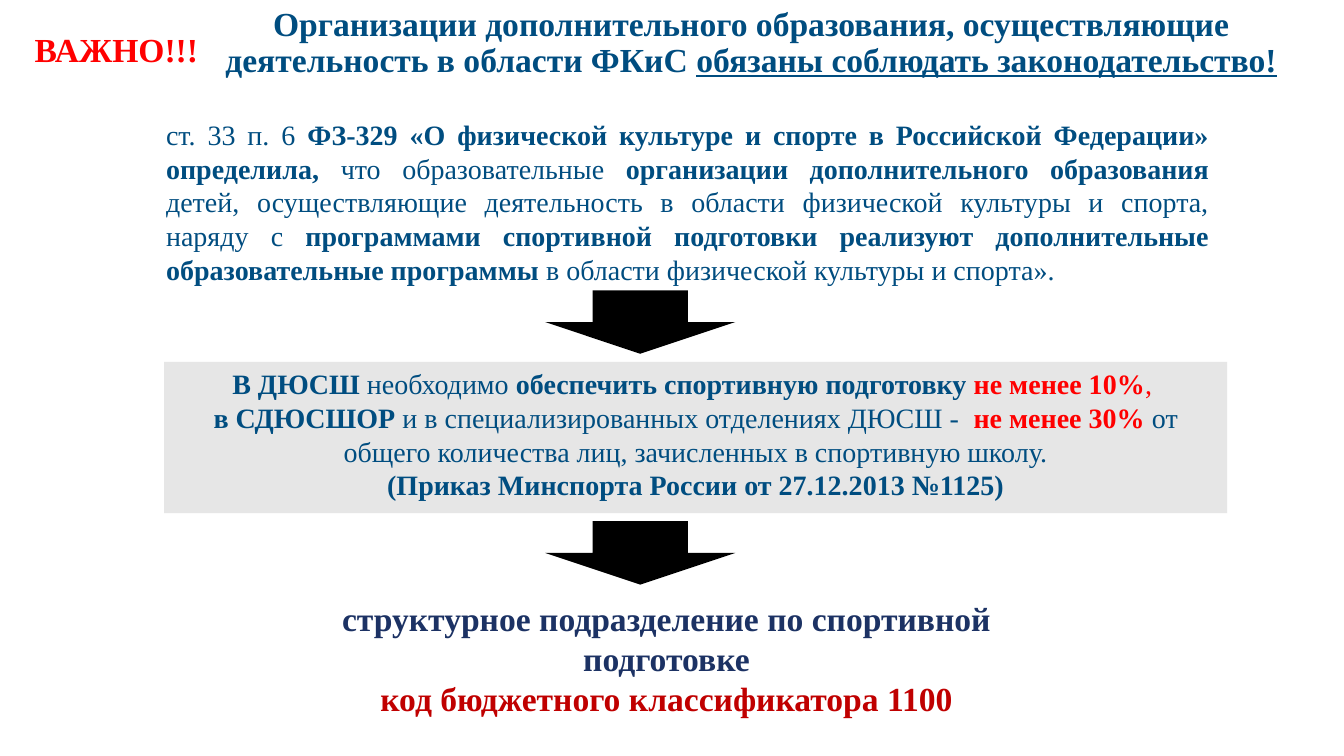
import pptx
import pptx.util
import pptx.dml.color
import pptx.enum.shapes
import pptx.enum.text
import pptx.oxml
import pptx.oxml.ns

Inches = pptx.util.Inches
RGBColor = pptx.dml.color.RGBColor
SHAPE = pptx.enum.shapes.MSO_SHAPE
ALIGN = pptx.enum.text.PP_ALIGN
ANCHOR = pptx.enum.text.MSO_ANCHOR

BLUE = RGBColor(0x00, 0x4D, 0x80)
NAVY = RGBColor(0x1C, 0x32, 0x64)
RED = RGBColor(0xFF, 0x00, 0x00)
DARK_RED = RGBColor(0xC0, 0x00, 0x00)
GREY = RGBColor(0xCC, 0xCC, 0xCC)
BLACK = RGBColor(0x00, 0x00, 0x00)
FONT = "Times New Roman"


def write(shape, paragraphs, size, align=ALIGN.CENTER, anchor=ANCHOR.TOP, spacing=None):
    """Fill a shape with paragraphs, each a list of (text, colour, bold) spans."""
    frame = shape.text_frame
    frame.word_wrap = True
    frame.vertical_anchor = anchor
    for index, spans in enumerate(paragraphs):
        para = frame.add_paragraph() if index else frame.paragraphs[0]
        para.alignment = align
        if spacing:
            para.line_spacing = spacing
        for text, colour, bold in spans:
            span = para.add_run()
            span.text = text
            span.font.name = FONT
            span.font.size = pptx.util.Pt(size)
            span.font.bold = bold
            span.font.color.rgb = colour


def add_text(page, box, paragraphs, size, **layout):
    shape = page.shapes.add_textbox(*map(Inches, box))
    write(shape, paragraphs, size, **layout)
    return shape


def add_plain_shape(page, kind, box, colour):
    shape = page.shapes.add_shape(kind, *map(Inches, box))
    shape.shadow.inherit = False
    shape.fill.solid()
    shape.fill.fore_color.rgb = colour
    shape.line.fill.background()
    return shape


def add_header(page, box):
    left, top, width, height = box
    # Warning on the left
    add_text(page, (left, top + 0.06, 1.89, height - 0.06),
             [[("ВАЖНО!!!", RED, True)]], 24, anchor=ANCHOR.MIDDLE)
    # Title with an underlined ending
    title = add_text(page, (left + 1.73, top, width - 1.73, height), [[
        ("Организации дополнительного образования, осуществляющие "
         "деятельность в области ФКиС ", BLUE, True),
        ("обязаны соблюдать законодательство!", BLUE, True),
    ]], 24, anchor=ANCHOR.BOTTOM, spacing=0.9)
    title.text_frame.paragraphs[0].runs[-1].font.underline = True


def add_law(page, box):
    add_text(page, box, [[
        ("ст. 33 п. 6 ", BLUE, False),
        ("ФЗ-329 «О физической культуре и спорте в Российской Федерации» "
         "определила, ", BLUE, True),
        ("что образовательные ", BLUE, False),
        ("организации дополнительного образования", BLUE, True),
        (" детей, осуществляющие деятельность в области физической культуры "
         "и спорта, наряду с ", BLUE, False),
        ("программами спортивной подготовки реализуют дополнительные "
         "образовательные программы", BLUE, True),
        (" в области физической культуры и спорта».", BLUE, False),
    ]], 20, align=ALIGN.JUSTIFY, anchor=ANCHOR.MIDDLE)


def add_requirement(page, box):
    panel = add_plain_shape(page, SHAPE.RECTANGLE, box, GREY)
    # Translucent fill
    tint = panel.fill._xPr.find(".//" + pptx.oxml.ns.qn("a:srgbClr"))
    tint.append(pptx.oxml.parse_xml(
        f'<a:alpha {pptx.oxml.ns.nsdecls("a")} val="48000"/>'))
    write(panel, [
        [("В ДЮСШ", BLUE, True),
         (" необходимо ", BLUE, False),
         ("обеспечить спортивную подготовку ", BLUE, True),
         ("не менее 10%", RED, True),
         (", ", RED, False)],
        [("в СДЮСШОР", BLUE, True),
         (" и в специализированных отделениях ДЮСШ -  ", BLUE, False),
         ("не менее 30% ", RED, True),
         ("от общего количества лиц, зачисленных в спортивную школу.", BLUE, False)],
        [("(Приказ Минспорта России от 27.12.2013 №1125)", BLUE, True)],
    ], 20)


def add_conclusion(page, box):
    add_text(page, box, [
        [("структурное подразделение по спортивной подготовке", NAVY, True)],
        [("код бюджетного классификатора 1100", DARK_RED, True)],
    ], 24)


def main():
    deck = pptx.Presentation()
    deck.slide_width = Inches(13.34)
    deck.slide_height = Inches(7.5)
    page = deck.slides.add_slide(deck.slide_layouts[6])

    add_header(page, (0.21, 0.07, 12.76, 0.77))
    add_law(page, (1.55, 1.15, 10.55, 1.7))
    add_requirement(page, (1.63, 3.59, 10.55, 1.5))
    add_conclusion(page, (3.28, 5.88, 6.67, 1.3))
    # Arrows between the steps
    for top in (2.88, 5.17):
        add_plain_shape(page, SHAPE.DOWN_ARROW, (5.41, top, 1.89, 0.63), BLACK)

    deck.save("out.pptx")


if __name__ == "__main__":
    main()
